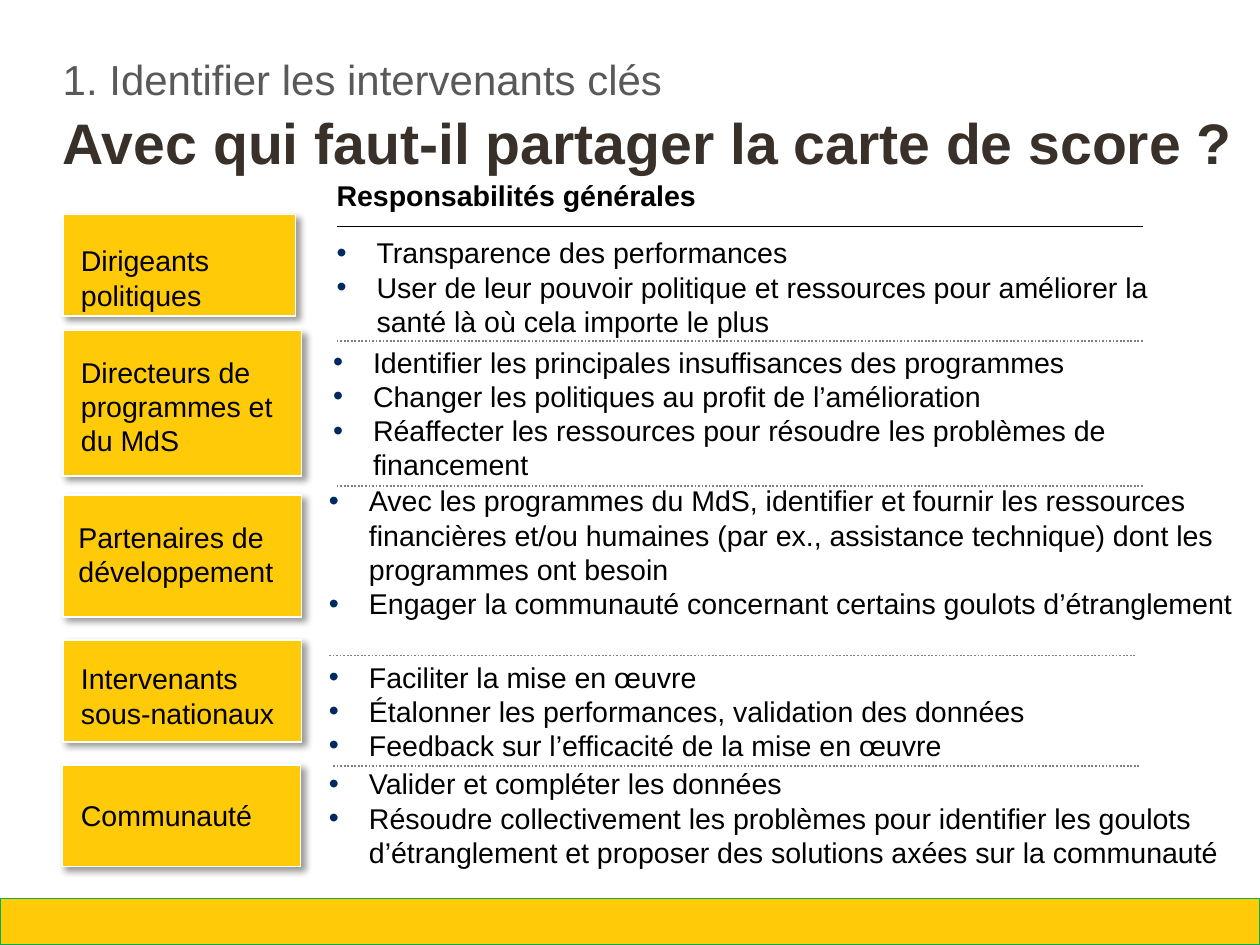
"""Build the slide on who should receive the scorecard."""
from lxml import etree
from pptx import Presentation, util as u
from pptx.dml.color import RGBColor
from pptx.enum import dml, shapes, text
from pptx.oxml.ns import qn

COLORS = {"gold": "FFCA08", "green": "00B050", "title": "39302A", "kicker": "595959",
          "black": "000000", "white": "FFFFFF", "grey": "808080", "bullet": "002960"}
FONT = "Arial"
SLIDE = (24.89, 18.67)
TITLE = ("Avec qui faut-il partager la carte de score ?", (1.24, 2.13, 23.27, 1.37))
KICKER = ("1. Identifier les intervenants clés", (1.24, 1.17, 22.4, 0.91))
HEADING = ("Responsabilités générales", (6.65, 3.51, 15.93, 0.69))
FOOTER = (0, 17.75, 24.89, 0.92)

ROWS = [
    {"label": "Dirigeants politiques",
     "card": (1.24, 4.24, 4.6, 2.01), "label_at": (1.6, 4.8, 4.17, 1.37),
     "list_at": (6.65, 4.65, 16.71, 2.06),
     "items": ["Transparence des performances",
               "User de leur pouvoir politique et ressources pour améliorer la santé "
               "là où cela importe le plus"]},
    {"label": "Directeurs de programmes et du MdS",
     "card": (1.24, 6.53, 4.72, 2.87), "label_at": (1.6, 6.99, 4.34, 2.06),
     "list_at": (6.58, 6.81, 17.83, 2.74),
     "items": ["Identifier les principales insuffisances des programmes",
               "Changer les politiques au profit de l’amélioration",
               "Réaffecter les ressources pour résoudre les problèmes de financement"]},
    {"label": "Partenaires de développement",
     "card": (1.24, 9.78, 4.72, 2.41), "label_at": (1.55, 10.26, 4.17, 1.37),
     "list_at": (6.5, 9.55, 17.91, 2.74),
     "items": ["Avec les programmes du MdS, identifier et fournir les ressources "
               "financières et/ou humaines (par ex., assistance technique) dont les "
               "programmes ont besoin",
               "Engager la communauté concernant certains goulots d’étranglement"]},
    {"label": "Intervenants sous-nationaux",
     "card": (1.24, 12.65, 4.72, 2.01), "label_at": (1.6, 13.06, 4.17, 1.37),
     "list_at": (6.5, 13.03, 15.93, 2.06),
     "items": ["Faciliter la mise en œuvre",
               "Étalonner les performances, validation des données",
               "Feedback sur l’efficacité de la mise en œuvre"]},
    {"label": "Communauté",
     "card": (1.22, 15.11, 4.72, 2.01), "label_at": (1.6, 15.75, 4.17, 0.69),
     "list_at": (6.5, 15.14, 17.7, 2.06),
     "items": ["Valider et compléter les données",
               "Résoudre collectivement les problèmes pour identifier les goulots "
               "d’étranglement et proposer des solutions axées sur la communauté"]},
]
RULE_WIDTH = 15.92
RULES = [(6.65, 4.47), (6.65, 6.73), (6.65, 9.6), (6.5, 12.95), (6.58, 15.14)]


def rgb(name):
    return RGBColor.from_string(COLORS[name])


def cm(values):
    return [u.Cm(v) for v in values]


def add_bullet(p):
    pPr = p._p.get_or_add_pPr()
    pPr.set("marL", str(u.Cm(0.79)))
    pPr.set("indent", str(-u.Cm(0.79)))
    clr = etree.SubElement(pPr, qn("a:buClr"))
    etree.SubElement(clr, qn("a:srgbClr"), val=COLORS["bullet"])
    etree.SubElement(pPr, qn("a:buFont"), typeface=FONT)
    etree.SubElement(pPr, qn("a:buChar"), char="•")


def write(sp, box, lines, size=16, color="black", bold=False, bullets=False,
          anchor=text.MSO_ANCHOR.TOP, spacing=1.0):
    sp.left, sp.top, sp.width, sp.height = cm(box)
    tf = sp.text_frame
    tf.word_wrap = True
    tf.auto_size = text.MSO_AUTO_SIZE.NONE
    tf.vertical_anchor = anchor
    tf.margin_left = tf.margin_right = tf.margin_top = tf.margin_bottom = 0
    for i, line in enumerate(lines):
        p = tf.add_paragraph() if i else tf.paragraphs[0]
        p.alignment = text.PP_ALIGN.LEFT
        p.line_spacing = spacing
        p.space_before = u.Pt(0)
        if bullets:
            p.level = 1
            add_bullet(p)
        r = p.add_run()
        r.text = line
        r.font.name, r.font.size, r.font.bold = FONT, u.Pt(size), bold
        r.font.color.rgb = rgb(color)


def add_text(s, box, lines, **style):
    write(s.shapes.add_textbox(*cm(box)), box, lines, **style)


def add_rect(s, box, line, width):
    sp = s.shapes.add_shape(shapes.MSO_SHAPE.RECTANGLE, *cm(box))
    sp.shadow.inherit = False
    sp.fill.solid()
    sp.fill.fore_color.rgb = rgb("gold")
    sp.line.color.rgb = rgb(line)
    sp.line.width = u.Pt(width)
    return sp


def add_card(s, box):
    sp = add_rect(s, box, "white", 1)
    effects = sp._element.spPr.find(qn("a:effectLst"))
    shadow = etree.SubElement(effects, qn("a:outerShdw"), blurRad=str(u.Pt(4)),
                              dist=str(u.Pt(3)), dir="2700000", algn="tl", rotWithShape="0")
    clr = etree.SubElement(shadow, qn("a:srgbClr"), val=COLORS["black"])
    etree.SubElement(clr, qn("a:alpha"), val="40000")


def add_rule(s, x, y, dotted):
    ln = s.shapes.add_connector(shapes.MSO_CONNECTOR.STRAIGHT, *cm((x, y, x + RULE_WIDTH, y)))
    ln.line.color.rgb = rgb("grey" if dotted else "black")
    ln.line.width = u.Pt(1 if dotted else 0.75)
    if dotted:
        ln.line.dash_style = dml.MSO_LINE.ROUND_DOT
    etree.SubElement(ln._element.spPr, qn("a:effectLst"))


def main():
    prs = Presentation()
    prs.slide_width, prs.slide_height = cm(SLIDE)
    s = prs.slides.add_slide(prs.slide_layouts[1])
    add_rect(s, FOOTER, "green", 0.75)
    write(s.shapes.title, TITLE[1], [TITLE[0]], size=32, color="title", bold=True)
    add_text(s, KICKER[1], [KICKER[0]], size=23.5, color="kicker", spacing=0.9)
    add_text(s, HEADING[1], [HEADING[0]], bold=True)
    for i, (x, y) in enumerate(RULES):
        add_rule(s, x, y, dotted=i > 0)
    for i, row in enumerate(ROWS):
        add_card(s, row["card"])
        add_text(s, row["label_at"], [row["label"]], anchor=text.MSO_ANCHOR.MIDDLE)
        if i:
            add_text(s, row["list_at"], row["items"], bullets=True)
        else:
            write(s.placeholders[1], row["list_at"], row["items"], bullets=True)
    prs.save("out.pptx")


if __name__ == "__main__":
    main()
